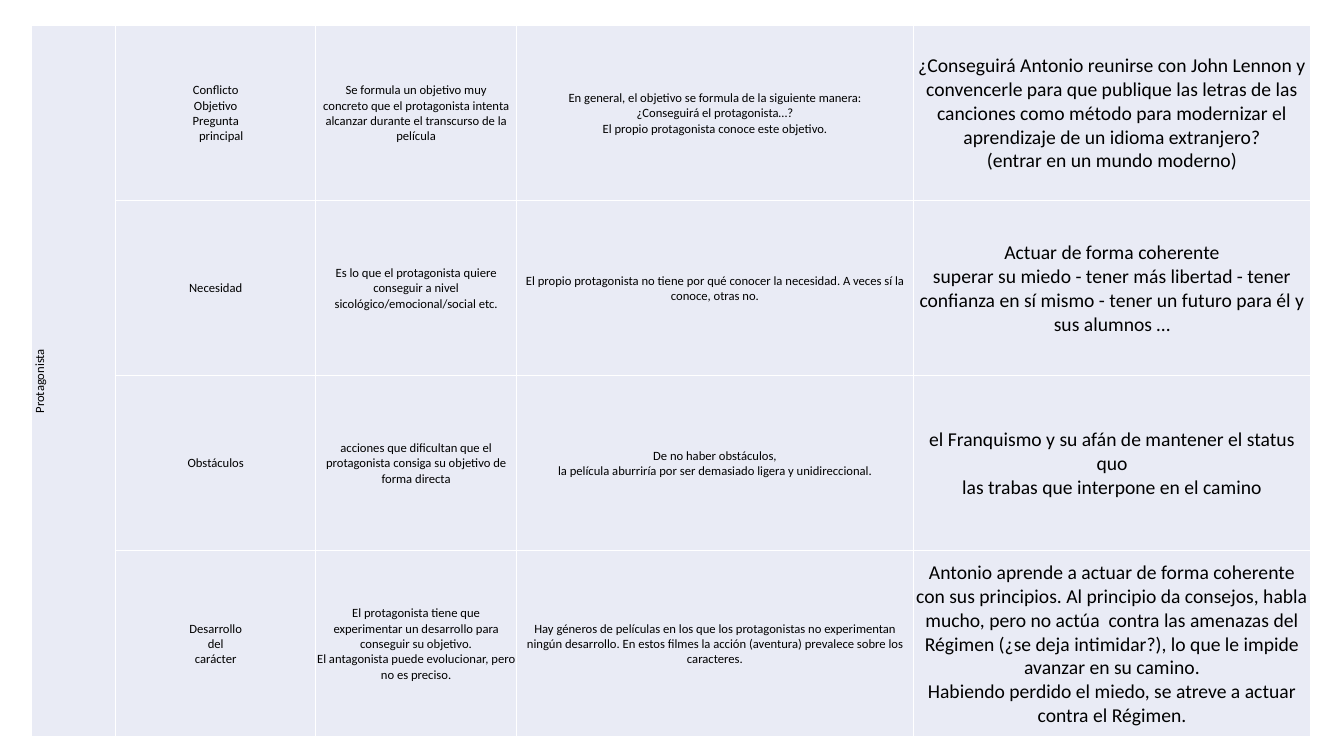
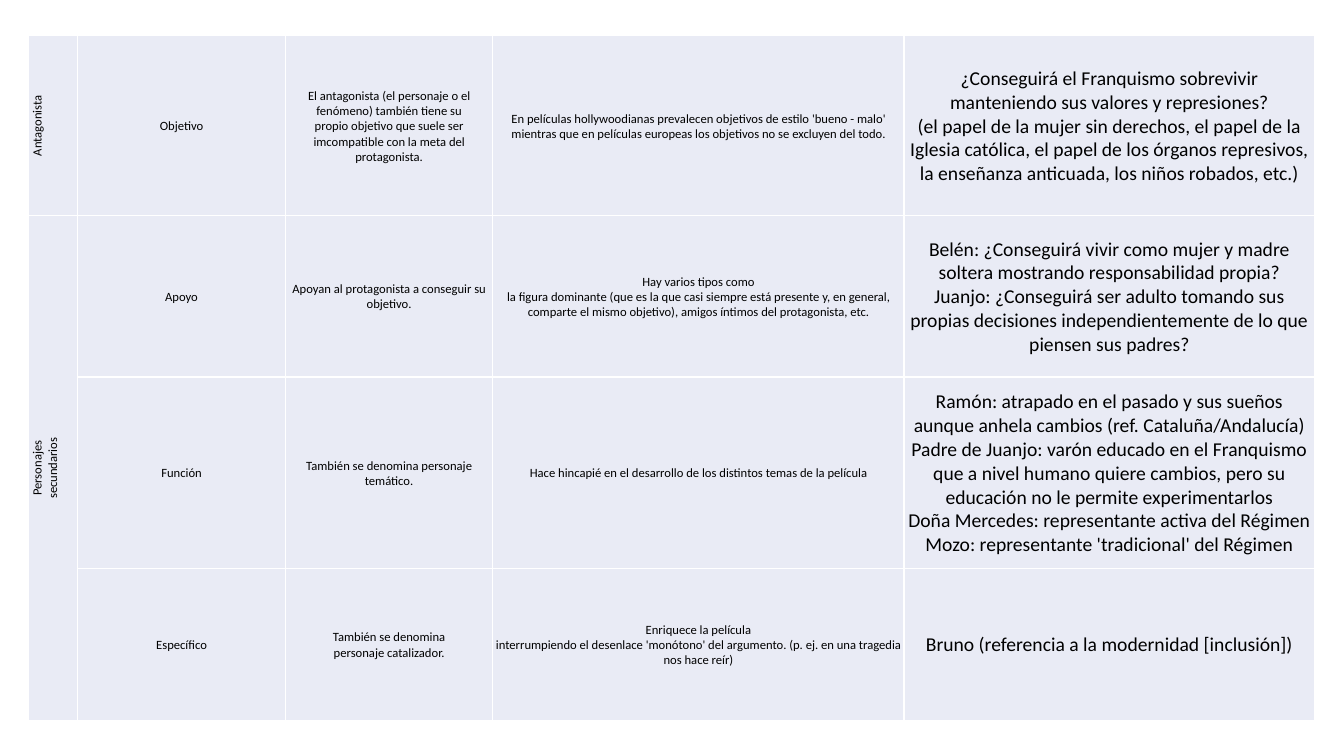
from dataclasses import dataclass

from lxml.etree import fromstring
from pptx import Presentation
from pptx.dml.color import RGBColor
from pptx.enum.text import MSO_ANCHOR, PP_ALIGN
from pptx.oxml.ns import nsdecls
from pptx.util import Cm, Pt


# Theme: colours, type sizes and spacing
@dataclass(frozen=True)
class Theme:
    font: str = "Calibri"
    ink: str = "000000"
    cell_fill: str = "E9EBF5"
    border: str = "FFFFFF"
    border_width: int = Pt(1)
    small: int = Pt(9)
    large: int = Pt(14)
    inset: int = Cm(0.03)
    line_indent: int = Cm(0.28)


THEME = Theme()


def write_text(text_frame, text, size=THEME.small, color=THEME.ink, align=PP_ALIGN.CENTER):
    """Write one paragraph per line; a leading tab indents the line."""
    for index, line in enumerate(text.split("\n")):
        paragraph = text_frame.add_paragraph() if index else text_frame.paragraphs[0]
        paragraph.alignment = align
        if line.startswith("\t"):
            paragraph._p.get_or_add_pPr().set("marL", str(THEME.line_indent))
        run = paragraph.add_run()
        run.text = line.strip()
        run.font.name = THEME.font
        run.font.size = size
        run.font.color.rgb = RGBColor.from_string(color)


class Deck:
    def __init__(self, theme):
        self.theme = theme
        self.presentation = Presentation()
        self.presentation.slide_width = Cm(33.87)
        self.presentation.slide_height = Cm(19.05)
        self.slide = None

    def add_slide(self):
        blank_layout = self.presentation.slide_layouts[6]
        self.slide = self.presentation.slides.add_slide(blank_layout)

    def style_cell(self, cell):
        cell.fill.solid()
        cell.fill.fore_color.rgb = RGBColor.from_string(self.theme.cell_fill)
        cell.vertical_anchor = MSO_ANCHOR.MIDDLE
        cell.margin_left = cell.margin_right = cell.margin_top = self.theme.inset
        cell.margin_bottom = 0
        # Borders come before the fill in the cell properties
        properties = cell._tc.get_or_add_tcPr()
        for position, side in enumerate(("lnL", "lnR", "lnT", "lnB")):
            properties.insert(position, fromstring(
                f'<a:{side} {nsdecls("a")} w="{self.theme.border_width}"><a:solidFill>'
                f'<a:srgbClr val="{self.theme.border}"/></a:solidFill></a:{side}>'))

    def add_character_table(self, groups, left, top, widths, heights):
        """Each group is a vertical label and the rows that it spans."""
        frame = self.slide.shapes.add_table(
            len(heights), len(widths), left, top, sum(widths), sum(heights))
        table = frame.table
        table.first_row = table.horz_banding = False
        for column, width in zip(table.columns, widths):
            column.width = width
        for row, height in zip(table.rows, heights):
            row.height = height
        for cell in table.iter_cells():
            self.style_cell(cell)

        row_index = 0
        for label, rows in groups:
            label_cell = table.cell(row_index, 0)
            if len(rows) > 1:
                label_cell.merge(table.cell(row_index + len(rows) - 1, 0))
            label_cell._tc.get_or_add_tcPr().set("vert", "vert270")
            write_text(label_cell.text_frame, label)
            for texts in rows:
                for column_index, text in enumerate(texts, start=1):
                    is_example = column_index == len(texts)
                    write_text(table.cell(row_index, column_index).text_frame, text,
                               size=self.theme.large if is_example else self.theme.small)
                row_index += 1


# Content: aspect, definition, remark, example from the film
PROTAGONIST = [
    ("Protagonista", [
        ("Conflicto\nObjetivo\nPregunta\n\tprincipal",
         "Se formula un objetivo muy\nconcreto que el protagonista intenta alcanzar durante "
         "el transcurso de la película",
         "En general, el objetivo se formula de la siguiente manera:\n"
         "¿Conseguirá el protagonista…?\nEl propio protagonista conoce este objetivo.",
         "¿Conseguirá Antonio reunirse con John Lennon y convencerle para que publique las "
         "letras de las canciones como método para modernizar el aprendizaje de un idioma "
         "extranjero?\n(entrar en un mundo moderno)"),
        ("Necesidad",
         "Es lo que el protagonista quiere\nconseguir a nivel sicológico/emocional/social etc.",
         "El propio protagonista no tiene por qué conocer la necesidad. A veces sí la conoce, "
         "otras no.",
         "Actuar de forma coherente\nsuperar su miedo - tener más libertad - tener confianza "
         "en sí mismo - tener un futuro para él y sus alumnos …"),
        ("Obstáculos",
         "acciones que dificultan que el\nprotagonista consiga su objetivo de forma directa",
         "De no haber obstáculos,\nla película aburriría por ser demasiado ligera y "
         "unidireccional.",
         "el Franquismo y su afán de mantener el status quo\n"
         "las trabas que interpone en el camino"),
        ("Desarrollo\ndel\ncarácter",
         "El protagonista tiene que\nexperimentar un desarrollo para conseguir su objetivo.\n"
         "El antagonista puede evolucionar, pero no es preciso.",
         "Hay géneros de películas en los que los protagonistas no experimentan ningún "
         "desarrollo. En estos filmes la acción (aventura) prevalece sobre los caracteres.",
         "Antonio aprende a actuar de forma coherente con sus principios. Al principio da "
         "consejos, habla mucho, pero no actúa  contra las amenazas del Régimen (¿se deja "
         "intimidar?), lo que le impide avanzar en su camino.\n"
         "Habiendo perdido el miedo, se atreve a actuar contra el Régimen."),
    ]),
]

OTHER_CHARACTERS = [
    ("Antagonista", [
        ("Objetivo",
         "El antagonista (el personaje o el fenómeno) también tiene su\npropio objetivo que "
         "suele ser imcompatible con la meta del protagonista.",
         "En películas hollywoodianas prevalecen objetivos de estilo 'bueno - malo' mientras "
         "que en películas europeas los objetivos no se excluyen del todo.",
         "¿Conseguirá el Franquismo sobrevivir manteniendo sus valores y represiones?\n"
         "(el papel de la mujer sin derechos, el papel de la Iglesia católica, el papel de los "
         "órganos represivos, la enseñanza anticuada, los niños robados, etc.)"),
    ]),
    ("Personajes\nsecundarios", [
        ("Apoyo",
         "Apoyan al protagonista a conseguir su objetivo.",
         "Hay varios tipos como\nla figura dominante (que es la que casi siempre está presente "
         "y, en general, comparte el mismo objetivo), amigos íntimos del protagonista, etc.",
         "Belén: ¿Conseguirá vivir como mujer y madre soltera mostrando responsabilidad "
         "propia?\nJuanjo: ¿Conseguirá ser adulto tomando sus propias decisiones "
         "independientemente de lo que piensen sus padres?"),
        ("Función",
         "También se denomina personaje temático.",
         "Hace hincapié en el desarrollo de los distintos temas de la película",
         "Ramón: atrapado en el pasado y sus sueños aunque anhela cambios (ref. "
         "Cataluña/Andalucía)\nPadre de Juanjo: varón educado en el Franquismo que a nivel "
         "humano quiere cambios, pero su educación no le permite experimentarlos\n"
         "Doña Mercedes: representante activa del Régimen\n"
         "Mozo: representante 'tradicional' del Régimen"),
        ("Específico",
         "También se denomina\npersonaje catalizador.",
         "Enriquece la película\ninterrumpiendo el desenlace 'monótono' del argumento. (p. ej. "
         "en una tragedia nos hace reír)",
         "Bruno (referencia a la modernidad [inclusión])"),
    ]),
]


def main():
    deck = Deck(THEME)

    # Slide 1: the protagonist
    deck.add_slide()
    deck.add_character_table(
        PROTAGONIST, Cm(0.78), Cm(0.64),
        widths=[Cm(2.13)] + [Cm(5.05)] * 2 + [Cm(10.01)] * 2,
        heights=[Cm(4.41)] * 3 + [Cm(4.7)])

    # Slide 2: antagonist and supporting characters
    deck.add_slide()
    deck.add_character_table(
        OTHER_CHARACTERS, Cm(0.72), Cm(0.9),
        widths=[Cm(1.24)] + [Cm(5.23)] * 2 + [Cm(10.36)] * 2,
        heights=[Cm(4.54), Cm(4.06), Cm(4.83), Cm(3.83)])

    deck.presentation.save("out.pptx")


if __name__ == "__main__":
    main()
